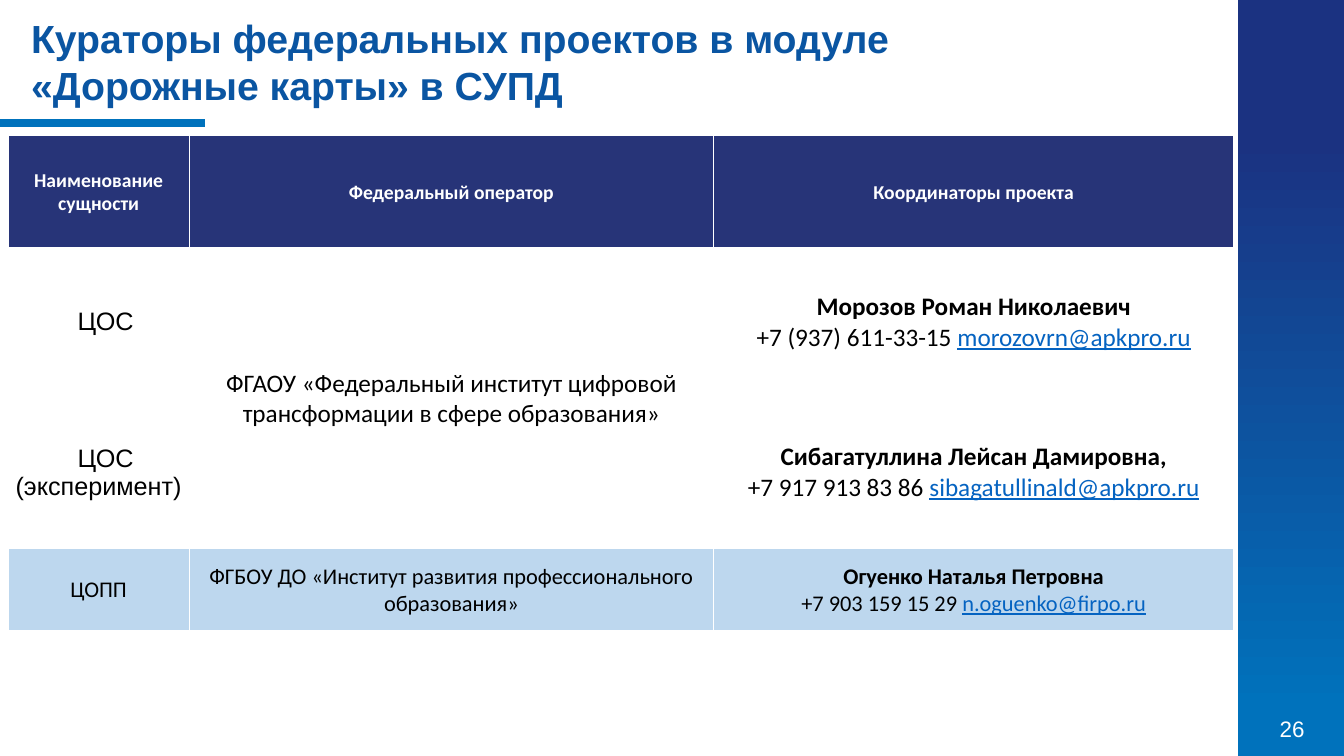
from lxml.etree import SubElement
from pptx import Presentation
from pptx.dml.color import RGBColor
from pptx.enum.shapes import MSO_CONNECTOR, MSO_SHAPE
from pptx.enum.text import MSO_ANCHOR, PP_ALIGN
from pptx.oxml.ns import qn
from pptx.util import Pt

WHITE = RGBColor(0xFF, 0xFF, 0xFF)
BLACK = RGBColor(0x00, 0x00, 0x00)
BRIGHT_BLUE = RGBColor(0x00, 0x72, 0xBC)
DEEP_BLUE = RGBColor(0x1B, 0x32, 0x81)
TITLE_BLUE = RGBColor(0x0A, 0x55, 0xA2)
HEADER_BLUE = RGBColor(0x27, 0x34, 0x78)
PALE_BLUE = RGBColor(0xBD, 0xD7, 0xEE)
LINK_BLUE = RGBColor(0x05, 0x63, 0xC1)


class SlideBuilder:
    heading_font = "Arial"
    body_font = "Calibri"

    def __init__(self, page):
        self.page = page

    def style(self, span, size, color, font, bold=False, underline=None):
        span.font.name = font
        span.font.size = Pt(size)
        span.font.bold = bold
        span.font.underline = underline
        span.font.color.rgb = color

    def gradient_band(self, left, top, width, height, stops):
        band = self.page.shapes.add_shape(
            MSO_SHAPE.RECTANGLE, Pt(left), Pt(top), Pt(width), Pt(height))
        band.shadow.inherit = False
        band.line.fill.background()
        band.fill.gradient()
        band.fill.gradient_angle = 270
        for stop, (position, color) in zip(band.fill.gradient_stops, stops):
            stop.position = position
            stop.color.rgb = color

    def rule(self, left, top, length, color, weight):
        line = self.page.shapes.add_connector(
            MSO_CONNECTOR.STRAIGHT, Pt(left), Pt(top), Pt(left + length), Pt(top))
        line.line.color.rgb = color
        line.line.width = Pt(weight)
        SubElement(line._element.spPr, qn("a:effectLst"))

    def text(self, left, top, width, height, words, size, color,
             bold=False, align=PP_ALIGN.LEFT, anchor=MSO_ANCHOR.TOP):
        box = self.page.shapes.add_textbox(Pt(left), Pt(top), Pt(width), Pt(height))
        frame = box.text_frame
        frame.word_wrap = True
        frame.vertical_anchor = anchor
        frame.text = words
        para = frame.paragraphs[0]
        para.alignment = align
        self.style(para.runs[0], size, color, self.heading_font, bold)

    def table(self, left, top, widths, heights):
        frame = self.page.shapes.add_table(
            len(heights), len(widths), Pt(left), Pt(top), Pt(sum(widths)), Pt(sum(heights)))
        grid = frame.table
        for column, width in zip(grid.columns, widths):
            column.width = Pt(width)
        for row, height in zip(grid.rows, heights):
            row.height = Pt(height)
        return grid

    def frame_cell(self, cell, fill):
        cell.margin_left = cell.margin_right = cell.margin_top = Pt(0.72)
        cell.margin_bottom = Pt(0)
        cell.vertical_anchor = MSO_ANCHOR.MIDDLE
        for side in ("a:lnL", "a:lnR", "a:lnT", "a:lnB"):
            edge = SubElement(cell._tc.get_or_add_tcPr(), qn(side), w=str(Pt(1)))
            paint = SubElement(edge, qn("a:solidFill"))
            SubElement(paint, qn("a:srgbClr"), val=str(WHITE))
        cell.fill.solid()
        cell.fill.fore_color.rgb = fill

    def cell_text(self, cell, words, size, color=BLACK, font=body_font,
                  bold=False, first_indent=0):
        cell.text_frame.text = words
        para = cell.text_frame.paragraphs[0]
        para.alignment = PP_ALIGN.CENTER
        if first_indent:
            para._p.get_or_add_pPr().set("indent", str(Pt(first_indent)))
        self.style(para.runs[0], size, color, font, bold)

    def contact(self, cell, name, phone, mail, size):
        self.cell_text(cell, name, size, bold=True)
        para = cell.text_frame.add_paragraph()
        para.alignment = PP_ALIGN.CENTER
        for words, color, underline in ((phone + " ", BLACK, None), (mail, LINK_BLUE, True)):
            span = para.add_run()
            span.text = words
            self.style(span, size, color, self.body_font, underline=underline)


def main():
    deck = Presentation()
    deck.slide_width, deck.slide_height = Pt(960), Pt(540)
    builder = SlideBuilder(deck.slides.add_slide(deck.slide_layouts[6]))

    # Side band, page number and accent line
    builder.gradient_band(884.3, 0, 75.7, 540, ((0.18, DEEP_BLUE), (0.94, BRIGHT_BLUE)))
    builder.text(894.2, 505.8, 57.6, 29.2, "26", 16, WHITE,
                 align=PP_ALIGN.CENTER, anchor=MSO_ANCHOR.MIDDLE)
    builder.rule(0, 87.8, 146.4, BRIGHT_BLUE, 6)

    # Table frame
    grid = builder.table(5.8, 96.8, (129.3, 374.7, 371.5), (80.4, 105.2, 109.4, 59))
    row_fills = (HEADER_BLUE, WHITE, WHITE, PALE_BLUE)
    for row, fill in zip(grid.rows, row_fills):
        for cell in row.cells:
            builder.frame_cell(cell, fill)
    grid.cell(1, 1).merge(grid.cell(2, 1))

    # Header row
    headings = ("Наименование сущности", "Федеральный оператор", "Координаторы проекта")
    for column, heading in enumerate(headings):
        builder.cell_text(grid.cell(0, column), heading, 14, WHITE, bold=True)

    # Entities
    for row, entity in enumerate(("ЦОС", "ЦОС (эксперимент)"), 1):
        builder.cell_text(grid.cell(row, 0), entity, 18,
                          font=builder.heading_font, first_indent=10)
    builder.cell_text(grid.cell(3, 0), "ЦОПП", 16)

    # Federal operators
    builder.cell_text(grid.cell(1, 1), "ФГАОУ «Федеральный институт цифровой "
                      "трансформации в сфере образования»", 18)
    builder.cell_text(grid.cell(3, 1), "ФГБОУ ДО «Институт развития "
                      "профессионального образования»", 16)

    # Coordinators
    coordinators = (
        ("Морозов Роман Николаевич", "+7 (937) 611-33-15", "morozovrn@apkpro.ru", 18),
        ("Сибагатуллина Лейсан Дамировна,", "+7 917 913 83 86", "sibagatullinald@apkpro.ru", 18),
        ("Огуенко Наталья Петровна", "+7 903 159 15 29", "n.oguenko@firpo.ru", 16),
    )
    for row, coordinator in enumerate(coordinators, 1):
        builder.contact(grid.cell(row, 2), *coordinator)

    # Title
    builder.text(15.1, 6.5, 633.6, 74.9, "Кураторы федеральных проектов в модуле "
                 "«Дорожные карты» в СУПД", 28, TITLE_BLUE, bold=True)

    deck.save("out.pptx")


if __name__ == "__main__":
    main()
